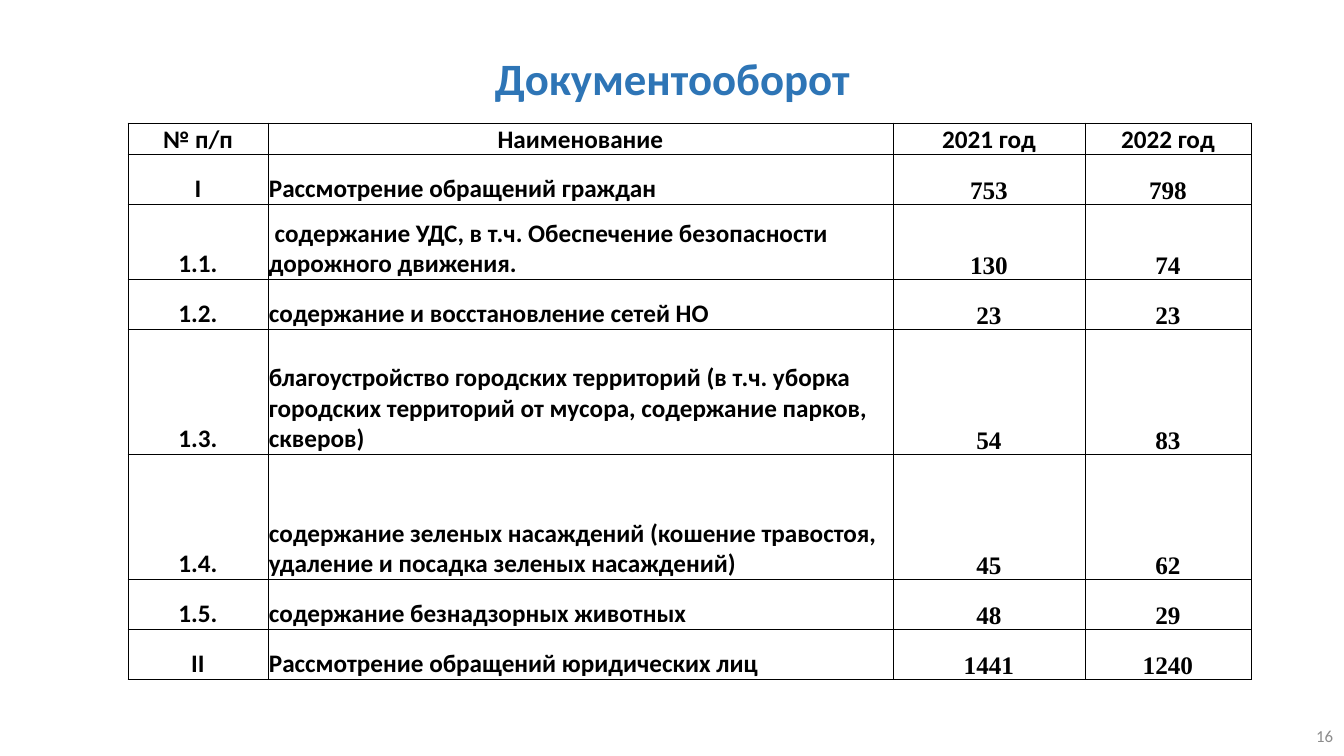
from lxml import etree
from pptx import Presentation
from pptx.dml.color import RGBColor
from pptx.enum.text import MSO_ANCHOR, MSO_AUTO_SIZE, PP_ALIGN
from pptx.oxml.ns import qn
from pptx.util import Emu, Pt

TITLE = "Документооборот"
PAGE_NUMBER = "16"
HEADER = ("№ п/п", "Наименование", "2021 год", "2022 год")
RECORDS = [
    ("I", "Рассмотрение обращений граждан", 753, 798),
    ("1.1.", " содержание УДС, в т.ч. Обеспечение безопасности дорожного движения.", 130, 74),
    ("1.2.", "содержание и восстановление сетей НО", 23, 23),
    ("1.3.", "благоустройство городских территорий (в т.ч. уборка городских территорий "
             "от мусора, содержание парков, скверов)", 54, 83),
    ("1.4.", "содержание зеленых насаждений (кошение травостоя, удаление и посадка "
             "зеленых насаждений)", 45, 62),
    ("1.5.", "содержание безнадзорных животных", 48, 29),
    ("II", "Рассмотрение обращений юридических лиц", 1441, 1240),
]

COLORS = {"title": "2E75B6", "text": "000000", "border": "000000", "number": "8C8C8C"}
TEXT_FONT, VALUE_FONT = "Calibri", "Times New Roman"
PAGE_SIZE = (1344, 756)
TITLE_BOX = (93, 40, 1159, 83)
NUMBER_BOX = (1041, 716, 302, 40)
TABLE_LEFT, TABLE_TOP = 128, 123
COLUMN_WIDTHS = (140, 625, 192, 166)
ROW_HEIGHTS = (30, 50, 75, 50, 125, 125, 50, 50)
NAME_COLUMN, FIRST_VALUE_COLUMN = 1, 2


def px(length):
    return Emu(round(length * 12192000 / PAGE_SIZE[0]))


def place(shape, box):
    shape.left, shape.top, shape.width, shape.height = map(px, box)


def write(para, text, size, color, align, font=TEXT_FONT, bold=True):
    para.alignment = align
    span = para.add_run()
    span.text = text
    span.font.name = font
    span.font.size = Pt(size)
    span.font.bold = bold
    span.font.color.rgb = RGBColor.from_string(COLORS[color])


def add_borders(cell):
    properties = cell._tc.get_or_add_tcPr()
    for side in ("lnL", "lnR", "lnT", "lnB"):
        line = etree.SubElement(properties, qn(f"a:{side}"), w=str(Pt(0.5)))
        fill = etree.SubElement(line, qn("a:solidFill"))
        etree.SubElement(fill, qn("a:srgbClr"), val=COLORS["border"])


def fill_cell(cell, text, align, font):
    cell.vertical_anchor = MSO_ANCHOR.BOTTOM
    cell.margin_left = cell.margin_right = cell.margin_top = px(1)
    cell.margin_bottom = 0
    add_borders(cell)
    cell.fill.background()
    write(cell.text_frame.paragraphs[0], text, 18, "text", align, font)


def add_title(page):
    title = page.shapes.title
    place(title, TITLE_BOX)
    frame = title.text_frame
    frame.auto_size = MSO_AUTO_SIZE.NONE
    frame.vertical_anchor = MSO_ANCHOR.MIDDLE
    para = frame.paragraphs[0]
    para.line_spacing = 0.9
    write(para, TITLE, 32, "title", PP_ALIGN.CENTER)


def add_records(page):
    rows = [HEADER, *RECORDS]
    table = page.shapes.add_table(
        len(rows), len(HEADER), px(TABLE_LEFT), px(TABLE_TOP),
        px(sum(COLUMN_WIDTHS)), px(sum(ROW_HEIGHTS))).table
    table.horz_banding = False
    for column, width in zip(table.columns, COLUMN_WIDTHS):
        column.width = px(width)
    for row, height in zip(table.rows, ROW_HEIGHTS):
        row.height = px(height)
    for r, values in enumerate(rows):
        for c, value in enumerate(values):
            is_name = r > 0 and c == NAME_COLUMN
            is_value = r > 0 and c >= FIRST_VALUE_COLUMN
            fill_cell(table.cell(r, c), str(value),
                      PP_ALIGN.LEFT if is_name else PP_ALIGN.CENTER,
                      VALUE_FONT if is_value else TEXT_FONT)


def add_page_number(page):
    box = page.shapes.add_textbox(*map(px, NUMBER_BOX))
    frame = box.text_frame
    frame.word_wrap = True
    frame.vertical_anchor = MSO_ANCHOR.MIDDLE
    write(frame.paragraphs[0], PAGE_NUMBER, 12, "number", PP_ALIGN.RIGHT, bold=False)


def main():
    deck = Presentation()
    deck.slide_width, deck.slide_height = map(px, PAGE_SIZE)
    page = deck.slides.add_slide(deck.slide_layouts.get_by_name("Title Only"))
    add_title(page)
    add_records(page)
    add_page_number(page)
    deck.save("out.pptx")


if __name__ == "__main__":
    main()
